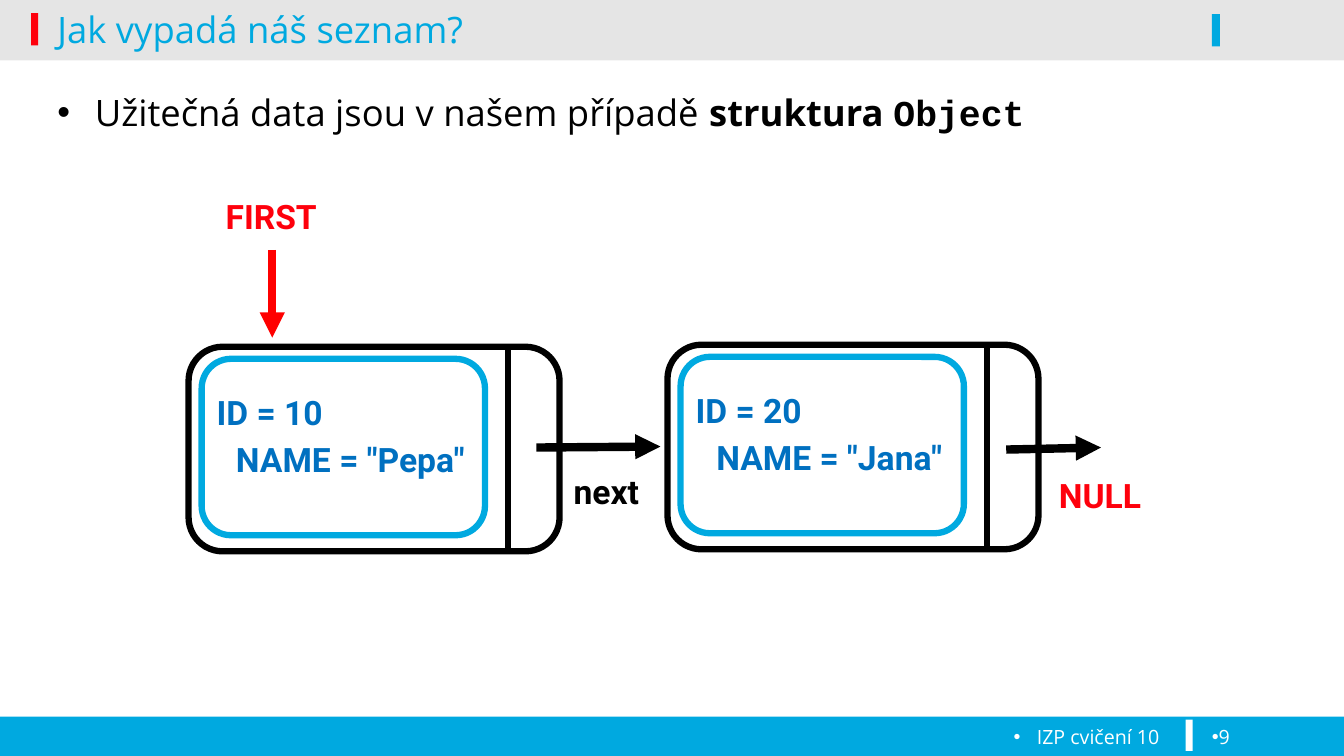
import pptx
import pptx.util
import pptx.dml.color
import pptx.enum.shapes
import pptx.enum.text
import pptx.oxml
import pptx.oxml.ns

Inches, Pt = pptx.util.Inches, pptx.util.Pt
RGB = pptx.dml.color.RGBColor.from_string
ALIGN = pptx.enum.text.PP_ALIGN
ANCHOR = pptx.enum.text.MSO_ANCHOR
SHAPE = pptx.enum.shapes.MSO_SHAPE

WIDTH, HEIGHT = 13.33, 7.5
COLORS = {"cyan": "00A9E0", "red": "FE000C", "arrow_red": "FF0000",
          "blue": "0070C0", "black": "000000", "white": "FFFFFF"}

TITLE = "Jak vypadá náš seznam?"
BODY = [("Užitečná data jsou v našem případě ", {}),
        ("struktura ", {"bold": True}),
        ("Object", {"bold": True, "name": "Courier New"})]

# left, top, width, height, colour, opacity in percent
BARS = [
    (0, 7.11, WIDTH, 0.39, "cyan", 100),
    (0, 0.56, WIDTH, 0.04, "black", 10),
    (0, 0, WIDTH, 0.56, "black", 10),
    (0.31, 0.13, 0.07, 0.32, "red", 100),
    (11.76, 7.14, 0.07, 0.31, "white", 100),
    (12.02, 0.14, 0.08, 0.32, "cyan", 100),
]
# text, box, alignment, hanging indent
FOOTERS = [
    ("IZP cvičení 10", (0.16, 7.14, 11.44, 0.36), ALIGN.RIGHT, 0.23),
    ("9", (11.92, 7.14, 1.21, 0.36), ALIGN.LEFT, 0),
]
# left and top of each list node, and its data
NODES = [
    (1.87, 3.44, ["ID = 10", 'NAME = "Pepa"']),
    (6.62, 3.42, ["ID = 20", 'NAME = "Jana"']),
]
NODE_SIZE = (3.68, 2.03)
OBJECT_SIZE = (2.81, 1.75)
DIVIDER = 3.17
# text, box, alignment, colour
LABELS = [
    ("FIRST", (2.02, 1.89, 1.34, 0.5), ALIGN.CENTER, "red"),
    ("NULL", (10.36, 4.66, 1.1, 0.5), ALIGN.CENTER, "red"),
    ("next", (5.59, 4.62, 2.85, 0.99), ALIGN.LEFT, "black"),
]
# start, end, colour
ARROWS = [
    ((2.7, 2.48), (2.7, 3.35), "arrow_red"),
    ((5.32, 4.44), (6.55, 4.43), "black"),
    ((9.98, 4.46), (10.92, 4.44), "black"),
]


def inches(values):
    return [Inches(value) for value in values]


def add_child(parent, tag, **attributes):
    child = parent.makeelement(pptx.oxml.ns.qn(tag), attributes)
    parent.append(child)
    return child


def add_bullet(paragraph, indent):
    properties = paragraph._p.get_or_add_pPr()
    properties.set("marL", str(Inches(indent)))
    properties.set("indent", str(-Inches(indent)))
    add_child(properties, "a:buFont", typeface="Arial")
    add_child(properties, "a:buChar", char="•")


def add_run(paragraph, text, color, **font_values):
    run = paragraph.add_run()
    run.text = text
    for name, value in font_values.items():
        setattr(run.font, name, value)
    run.font.color.rgb = RGB(COLORS[color])


def add_textbox(box):
    frame = slide.shapes.add_textbox(*inches(box)).text_frame
    frame.word_wrap = True
    return frame


def add_shape(kind, box, fill=None, line=None):
    shape = slide.shapes.add_shape(kind, *inches(box))
    shape.shadow.inherit = False
    if fill:
        shape.fill.solid()
        shape.fill.fore_color.rgb = RGB(COLORS[fill])
    else:
        shape.fill.background()
    if line:
        shape.line.color.rgb = RGB(COLORS[line])
        shape.line.width = Pt(4.5)
    else:
        shape.line.fill.background()
    return shape


def add_line(start, end, color, width, arrow=False):
    line = slide.shapes.add_connector(
        pptx.enum.shapes.MSO_CONNECTOR.STRAIGHT, *inches(start + end))
    line.line.color.rgb = RGB(COLORS[color])
    line.line.width = Pt(width)
    if arrow:
        add_child(line.line._get_or_add_ln(), "a:tailEnd", type="triangle")
    add_child(line.element.spPr, "a:effectLst")


def add_labels(box, texts, alignments, color):
    frame = add_textbox(box)
    for index, (text, alignment) in enumerate(zip(texts, alignments)):
        paragraph = frame.add_paragraph() if index else frame.paragraphs[0]
        paragraph.alignment = alignment
        paragraph.space_before = Pt(5 if index else 0)
        add_run(paragraph, text, color, name="Roboto", size=Pt(24), bold=True)


def place(placeholder, box, anchor):
    """Move a placeholder in front of the bars and return its first paragraph."""
    tree = placeholder.element.getparent()
    tree.append(placeholder.element)
    for name, value in zip(("left", "top", "width", "height"), inches(box)):
        setattr(placeholder, name, value)
    frame = placeholder.text_frame
    frame.vertical_anchor = anchor
    frame.auto_size = pptx.enum.text.MSO_AUTO_SIZE.NONE
    paragraph = frame.paragraphs[0]
    paragraph.alignment = ALIGN.LEFT
    paragraph.space_before = Pt(0)
    return paragraph


presentation = pptx.Presentation()
presentation.slide_width, presentation.slide_height = inches((WIDTH, HEIGHT))
slide = presentation.slides.add_slide(presentation.slide_layouts[1])

for *box, color, opacity in BARS:
    bar = add_shape(SHAPE.RECTANGLE, box, fill=color)
    if opacity < 100:
        fill_color = bar.element.spPr.find(".//" + pptx.oxml.ns.qn("a:srgbClr"))
        add_child(fill_color, "a:alpha", val=str(opacity * 1000))

paragraph = place(slide.shapes.title, (0.47, -0.11, 11.5, 0.79), ANCHOR.MIDDLE)
add_run(paragraph, TITLE, "cyan", name="Open Sans", size=Pt(26))

paragraph = place(slide.placeholders[1], (0.47, 0.84, 12.6, 5.83), ANCHOR.TOP)
add_bullet(paragraph, 0.37)
for text, changes in BODY:
    add_run(paragraph, text, "black", **{"name": "Open Sans", "size": Pt(26), **changes})

for text, box, alignment, indent in FOOTERS:
    paragraph = add_textbox(box).paragraphs[0]
    paragraph.alignment = alignment
    add_bullet(paragraph, indent)
    add_run(paragraph, text, "white", name="Open Sans", size=Pt(14))

for left, top, data in NODES:
    add_shape(SHAPE.ROUNDED_RECTANGLE, (left, top, *NODE_SIZE), "white", "black")
    add_line((left + DIVIDER, top), (left + DIVIDER, top + NODE_SIZE[1]), "black", 4.5)
    add_labels((left + 0.18, top + 0.4, 2.85, 1.47), data,
               (ALIGN.LEFT, ALIGN.CENTER), "blue")
    add_shape(SHAPE.ROUNDED_RECTANGLE, (left + 0.13, top + 0.12, *OBJECT_SIZE), line="cyan")

for start, end, color in ARROWS:
    add_line(start, end, color, 6, arrow=True)

for text, box, alignment, color in LABELS:
    add_labels(box, [text], [alignment], color)

presentation.save("out.pptx")
